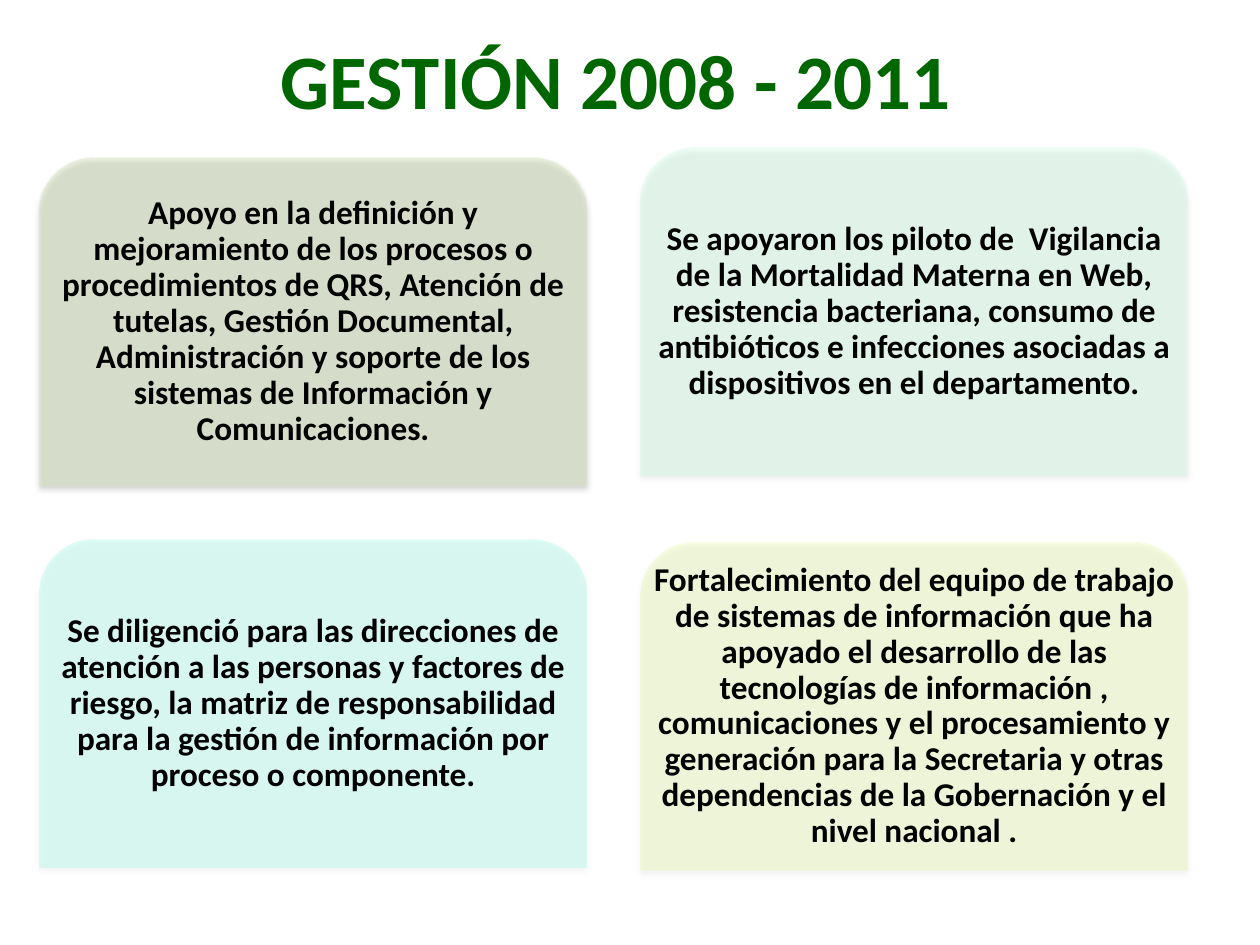
from dataclasses import dataclass

from lxml import etree
from pptx import Presentation
from pptx.dml.color import RGBColor
from pptx.enum.shapes import MSO_SHAPE
from pptx.enum.text import MSO_ANCHOR, PP_ALIGN
from pptx.oxml import parse_xml
from pptx.oxml.ns import nsdecls, qn
from pptx.util import Inches, Pt


@dataclass(frozen=True)
class Theme:
    font: str = "Calibri"
    title_color: str = "006600"
    body_color: str = "000000"
    title_size: int = 44
    body_size: int = 19


THEME = Theme()
CARD_W, CARD_H = 4.35, 2.61
LEFT_X, RIGHT_X = 0.31, 5.08

CARDS = [
    (LEFT_X, 1.25, "D7E4BD", 47,
     "Apoyo en la definición y mejoramiento de los procesos o procedimientos "
     "de QRS, Atención de tutelas, Gestión Documental, Administración y soporte "
     "de los sistemas de Información y Comunicaciones."),
    (RIGHT_X, 1.17, "99FFCC", 17,
     "Se apoyaron los piloto de  Vigilancia de la Mortalidad Materna en Web, "
     "resistencia bacteriana, consumo de antibióticos e infecciones asociadas "
     "a dispositivos en el departamento."),
    (LEFT_X, 4.28, "00FFCC", 12,
     "Se diligenció para las direcciones de atención a las personas y factores "
     "de riesgo, la matriz de responsabilidad para la gestión de información "
     "por proceso o componente."),
    (RIGHT_X, 4.3, "CCFF33", 14,
     "Fortalecimiento del equipo de trabajo de sistemas de información que ha "
     "apoyado el desarrollo de las tecnologías de información , comunicaciones "
     "y el procesamiento y generación para la Secretaria y otras dependencias "
     "de la Gobernación y el nivel nacional ."),
]


def add_text(slide, box, text, size, color, inset, spacing):
    tf = slide.shapes.add_textbox(*map(Inches, box)).text_frame
    tf.word_wrap = True
    tf.vertical_anchor = MSO_ANCHOR.MIDDLE
    tf.margin_left = tf.margin_right = Inches(inset)
    tf.margin_top = tf.margin_bottom = Inches(inset)
    tf.text = text
    p = tf.paragraphs[0]
    p.alignment = PP_ALIGN.CENTER
    p.line_spacing = spacing
    font = p.runs[0].font
    font.name = THEME.font
    font.size = Pt(size)
    font.bold = True
    font.color.rgb = RGBColor.from_string(color)


def set_opacity(sp, percent):
    color = sp._element.spPr.find(qn("a:solidFill"))[0]
    etree.SubElement(color, qn("a:alpha"), val=str(percent * 1000))


def add_shadow(sp):
    sp._element.spPr.append(parse_xml(
        f'<a:effectLst {nsdecls("a")}>'
        f'<a:outerShdw blurRad="{Pt(3.1)}" dist="{Pt(1.8)}" dir="5400000" rotWithShape="0">'
        '<a:srgbClr val="000000"><a:alpha val="35000"/></a:srgbClr>'
        '</a:outerShdw></a:effectLst>'))


def add_title(slide, box):
    add_text(slide, box, "GESTIÓN 2008 - 2011", THEME.title_size,
             THEME.title_color, 0.05, 1.0)


def add_card(slide, box, fill, opacity, text):
    sp = slide.shapes.add_shape(MSO_SHAPE.ROUND_2_SAME_RECTANGLE, *map(Inches, box))
    sp.fill.solid()
    sp.fill.fore_color.rgb = RGBColor.from_string(fill)
    sp.line.fill.background()
    set_opacity(sp, opacity)
    add_shadow(sp)
    add_text(slide, box, text, THEME.body_size, THEME.body_color, 0.08, 0.9)


def main():
    prs = Presentation()
    prs.slide_width, prs.slide_height = Inches(10), Inches(7.5)
    slide = prs.slides.add_slide(prs.slide_layouts[6])
    add_title(slide, (0.39, 0, 9, 1.25))
    for x, y, fill, opacity, text in CARDS:
        add_card(slide, (x, y, CARD_W, CARD_H), fill, opacity, text)
    prs.save("out.pptx")


if __name__ == "__main__":
    main()
